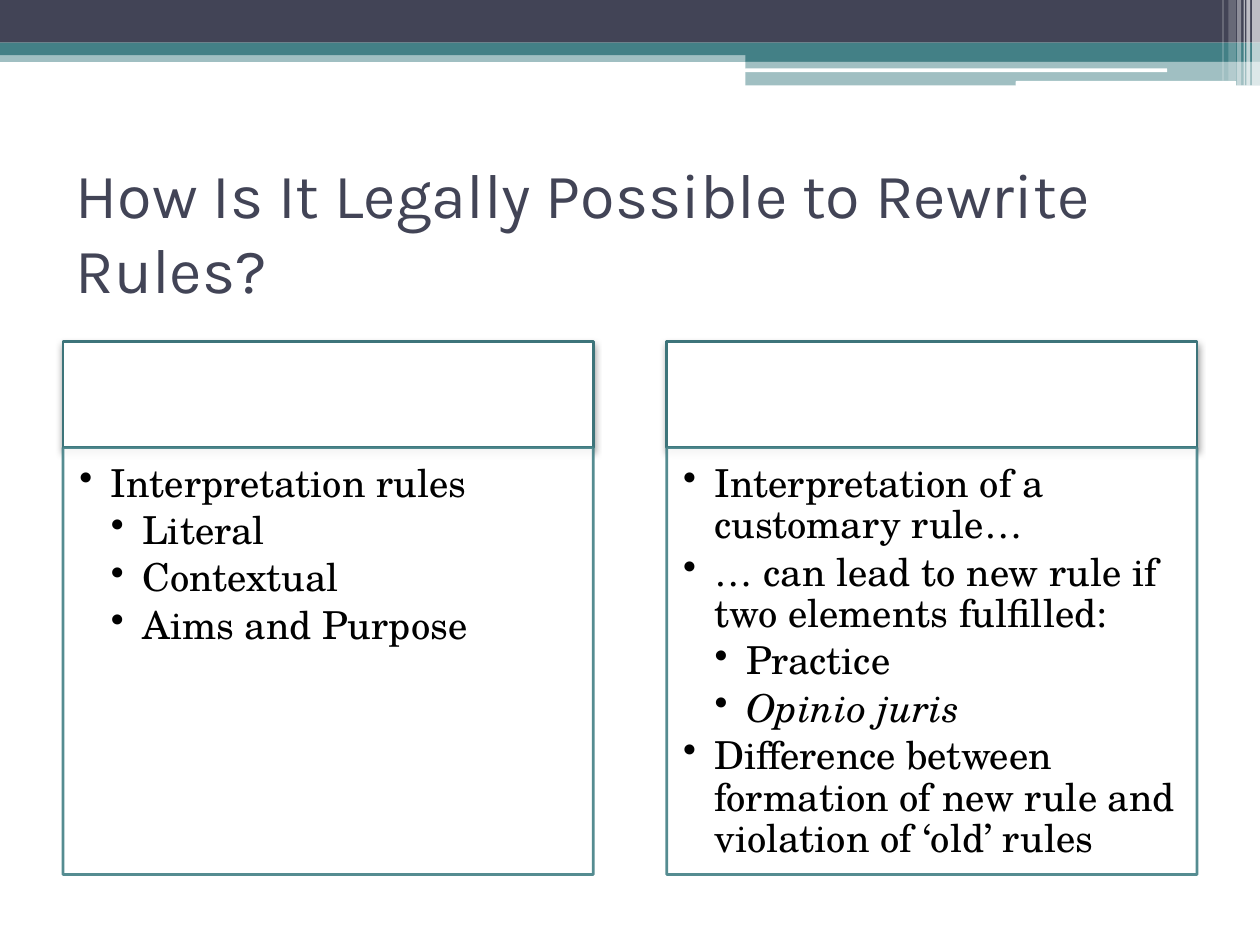
from typing import NamedTuple

from lxml import etree
from pptx import Presentation
from pptx.dml.color import RGBColor
from pptx.enum.shapes import MSO_SHAPE
from pptx.enum.text import MSO_ANCHOR, PP_ALIGN
from pptx.oxml.ns import qn
from pptx.util import Pt

RECT, ROUND = MSO_SHAPE.RECTANGLE, MSO_SHAPE.ROUNDED_RECTANGLE
TOP, MIDDLE = MSO_ANCHOR.TOP, MSO_ANCHOR.MIDDLE
LEFT = PP_ALIGN.LEFT
NAVY, TEAL, DARK = "424456", "438086", "3D747A"
WHITE, BLACK = "FFFFFF", "000000"
HEAD, BODY = "Karla", "TeX Gyre Schola"
INDENT = 18


class Box(NamedTuple):
    left: float
    top: float
    width: float
    height: float


class Band(NamedTuple):
    box: Box
    color: str
    alpha: int = 100
    kind: MSO_SHAPE = RECT


class Item(NamedTuple):
    text: str
    level: int = 0
    italic: bool = False


class Panel(NamedTuple):
    left: float
    items: list[Item]


BANDS = [
    Band(Box(0, 28.8, 720, 6.6), TEAL, 50),
    Band(Box(0, 0, 720, 24.4), NAVY),
    Band(Box(0, 24.4, 720, 7.2), TEAL),
    Band(Box(426, 28, 294, 7.2), TEAL),
    Band(Box(426, 34.6, 294, 14.2), TEAL, 50),
    Band(Box(425.8, 39.1, 241.2, 2.2), WHITE, kind=ROUND),
    Band(Box(580.4, 46.3, 126, 2.9), WHITE, kind=ROUND),
    Band(Box(715.5, 0, 4.5, 48.9), WHITE, 65),
    Band(Box(712.2, 0, 2.2, 48.9), WHITE, 65),
    Band(Box(710.7, 0, 0.7, 48.9), WHITE, 60),
    Band(Box(707, 0, 2.2, 48.9), WHITE, 40),
    Band(Box(702, 0, 4.3, 46.1), WHITE, 20),
    Band(Box(698.5, 0, 0.7, 46.1), WHITE, 30),
]

PANELS = [
    Panel(36, [
        Item("Interpretation rules"),
        Item("Literal", 1),
        Item("Contextual", 1),
        Item("Aims and Purpose", 1),
    ]),
    Panel(381, [
        Item("Interpretation of a customary rule…"),
        Item("… can lead to new rule if two elements fulfilled:"),
        Item("Practice", 1),
        Item("Opinio juris", 1, True),
        Item("Difference between formation of new rule and "
             "violation of ‘old’ rules"),
    ]),
]


def paint(target, color: str) -> None:
    target.rgb = RGBColor.from_string(color)


def draw(slide, band: Band, line: str | None = None):
    """Add a flat shape; its alpha holds for both fill and line."""
    shape = slide.shapes.add_shape(band.kind, *map(Pt, band.box))
    shape.shadow.inherit = False
    shape.fill.solid()
    paint(shape.fill.fore_color, band.color)
    if line:
        paint(shape.line.color, line)
        shape.line.width = Pt(1.5)
    else:
        shape.line.fill.background()
    if band.alpha < 100:
        for tint in shape.element.spPr.iter(qn("a:srgbClr")):
            etree.SubElement(tint, qn("a:alpha"), val=str(band.alpha * 1000))
    return shape


def cast(shape) -> None:
    """Give the shape a soft shadow straight below it."""
    effects = shape.element.spPr.find(qn("a:effectLst"))
    outer = etree.SubElement(
        effects, qn("a:outerShdw"), blurRad=str(Pt(4.1)), dist=str(Pt(2)),
        dir="5400000", rotWithShape="0")
    tint = etree.SubElement(outer, qn("a:srgbClr"), val=BLACK)
    etree.SubElement(tint, qn("a:alpha"), val="40000")


def write(frame, items: list[Item]) -> None:
    """Fill the frame with a bulleted list."""
    frame.word_wrap = True
    frame.vertical_anchor = TOP
    frame.margin_left = frame.margin_top = Pt(9.33)
    frame.margin_right, frame.margin_bottom = Pt(12.44), Pt(14)
    for index, item in enumerate(items):
        para = frame.add_paragraph() if index else frame.paragraphs[0]
        para.text = item.text
        para.level = item.level + 1
        para.alignment = LEFT
        para.line_spacing = 0.9
        para.space_after = Pt(3.3)
        para.font.name, para.font.size = BODY, Pt(22)
        para.font.italic = item.italic
        paint(para.font.color, BLACK)
        props = para._p.get_or_add_pPr()
        props.set("marL", str(Pt(INDENT * (item.level + 1))))
        props.set("indent", str(Pt(-INDENT)))
        mark = etree.Element(qn("a:buChar"), char="•")
        props.find(qn("a:defRPr")).addprevious(mark)


def build(slide, panel: Panel) -> None:
    head = draw(slide, Band(Box(panel.left, 195, 303, 60.8), WHITE), DARK)
    cast(head)
    box = Box(panel.left, 255.8, 303, 244)
    body = draw(slide, Band(box, WHITE, 90), TEAL)
    write(body.text_frame, panel.items)


def entitle(slide, text: str) -> None:
    title = slide.shapes.title
    title.left, title.top, title.width, title.height = map(
        Pt, Box(36, 90, 648, 84))
    frame = title.text_frame
    frame.text = text
    frame.word_wrap = True
    frame.vertical_anchor = MIDDLE
    para = frame.paragraphs[0]
    para.alignment = LEFT
    para.font.name, para.font.size = HEAD, Pt(36)
    paint(para.font.color, NAVY)


def main() -> None:
    deck = Presentation()
    deck.slide_width, deck.slide_height = Pt(720), Pt(540)
    slide = deck.slides.add_slide(deck.slide_layouts.get_by_name("Title Only"))
    for band in BANDS:
        draw(slide, band)
    entitle(slide, "How Is It Legally Possible to Rewrite Rules?")
    for panel in PANELS:
        build(slide, panel)
    deck.save("out.pptx")


if __name__ == "__main__":
    main()
